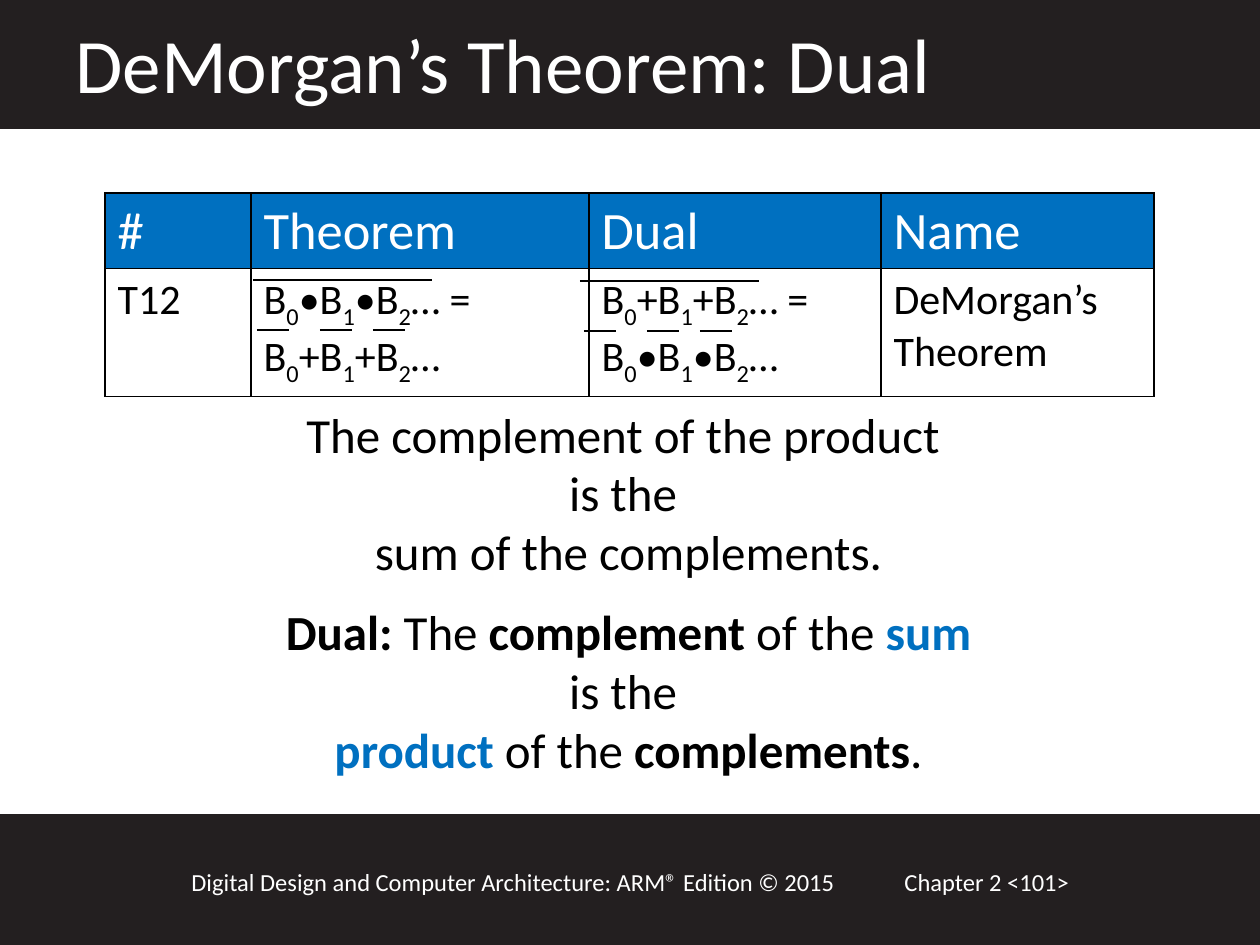
"""Build the slide on the dual form of DeMorgan's theorem."""
from itertools import groupby

from lxml import etree
from pptx import Presentation
from pptx.dml.color import RGBColor
from pptx.enum.shapes import MSO_CONNECTOR, MSO_SHAPE
from pptx.enum.text import MSO_AUTO_SIZE, PP_ALIGN
from pptx.oxml import parse_xml
from pptx.oxml.ns import nsdecls, qn
from pptx.util import Inches, Pt

BLACK = RGBColor(0x00, 0x00, 0x00)
WHITE = RGBColor(0xFF, 0xFF, 0xFF)
BLUE = RGBColor(0x00, 0x70, 0xC0)
CHARCOAL = RGBColor(0x23, 0x1F, 0x20)
FONT = "Calibri"


def px(length):
    return round(length * Inches(1) / 126)


def add_text(slide, left, top, width, height, text, size, color):
    box = slide.shapes.add_textbox(px(left), px(top), px(width), px(height))
    text_frame = box.text_frame
    text_frame.word_wrap = True
    text_frame.auto_size = MSO_AUTO_SIZE.SHAPE_TO_FIT_TEXT
    text_frame.text = text
    for paragraph in text_frame.paragraphs:
        paragraph.font.name = FONT
        paragraph.font.size = Pt(size)
        paragraph.font.color.rgb = color
    return text_frame


presentation = Presentation()
presentation.slide_width = px(1260)
presentation.slide_height = px(945)
slide = presentation.slides.add_slide(presentation.slide_layouts[6])

for top, height in ((816, 129), (0, 127)):
    band = slide.shapes.add_shape(MSO_SHAPE.RECTANGLE, 0, px(top), px(1260), px(height))
    band.shadow.inherit = False
    band.fill.solid()
    band.fill.fore_color.rgb = CHARCOAL
    band.line.color.rgb = CHARCOAL
    band.line.width = Pt(2)

add_text(slide, 892, 861, 273, 43, "Chapter 2 <101>", 14, WHITE)
add_text(slide, 179, 861, 725, 43,
         "Digital Design and Computer Architecture: ARM® Edition © 2015", 14, WHITE)
add_text(slide, 63, 10, 1092, 106, "DeMorgan’s Theorem: Dual", 44, WHITE)

statement = add_text(slide, 120, 398, 1017, 391,
                     "The complement of the product \nis the \nsum of the complements.\n\nis the \n",
                     28, BLACK)
dual_runs = {
    3: (("Dual: ", True, BLACK), ("The ", False, BLACK), ("complement ", True, BLACK),
        ("of the ", False, BLACK), ("sum", True, BLUE)),
    5: (("product ", True, BLUE), ("of the ", False, BLACK),
        ("complements", True, BLACK), (".", False, BLACK)),
}
for index, paragraph in enumerate(statement.paragraphs):
    paragraph.alignment = PP_ALIGN.CENTER
    for text, bold, color in dual_runs.get(index, ()):
        run = paragraph.add_run()
        run.text = text
        run.font.bold = bold
        run.font.color.rgb = color
statement.paragraphs[3].space_before = Pt(12)

rows = (("#", "Theorem", "Dual", "Name"),
        ("T12", "B0•B1•B2… = B0+B1+B2…", "B0+B1+B2… = B0•B1•B2…", "DeMorgan’s Theorem"))
column_widths = (146, 338, 292, 273)
row_heights = (75, 128)
row_styles = ((30, WHITE, BLUE), (24, BLACK, WHITE))
table = slide.shapes.add_table(2, 4, px(105), px(193), px(sum(column_widths)),
                               px(sum(row_heights))).table
table.first_row = False
table.horz_banding = False
for column, width in zip(table.columns, column_widths):
    column.width = px(width)
for row, height, texts, (size, color, fill) in zip(table.rows, row_heights, rows, row_styles):
    row.height = px(height)
    for cell, text in zip(row.cells, texts):
        properties = cell._tc.get_or_add_tcPr()
        for side in ("lnL", "lnR", "lnT", "lnB"):
            properties.append(parse_xml(
                f'<a:{side} {nsdecls("a")} w="12700"><a:solidFill>'
                f'<a:srgbClr val="{BLACK}"/></a:solidFill></a:{side}>'))
        cell.fill.solid()
        cell.fill.fore_color.rgb = fill
        paragraph = cell.text_frame.paragraphs[0]
        is_formula = text.startswith("B0")
        pieces = groupby(text, lambda letter: is_formula and letter.isdigit())
        for subscript, letters in pieces:
            run = paragraph.add_run()
            run.text = "".join(letters)
            run.font.name = FONT
            run.font.size = Pt(size)
            run.font.color.rgb = color
            if subscript:
                run._r.get_or_add_rPr().set("baseline", "-25000")

overbars = ((0, 0, 179), (4, 50, 32), (67, 50, 32), (120, 50, 32))
for formula_left, formula_top in ((253, 280), (580, 281)):
    for offset, drop, length in overbars:
        left, top = formula_left + offset, formula_top + drop
        overbar = slide.shapes.add_connector(MSO_CONNECTOR.STRAIGHT, px(left), px(top),
                                             px(left + length), px(top))
        overbar.line.color.rgb = BLACK
        overbar.line.width = Pt(0.75)
        etree.SubElement(overbar._element.spPr, qn("a:effectLst"))

presentation.save("out.pptx")
